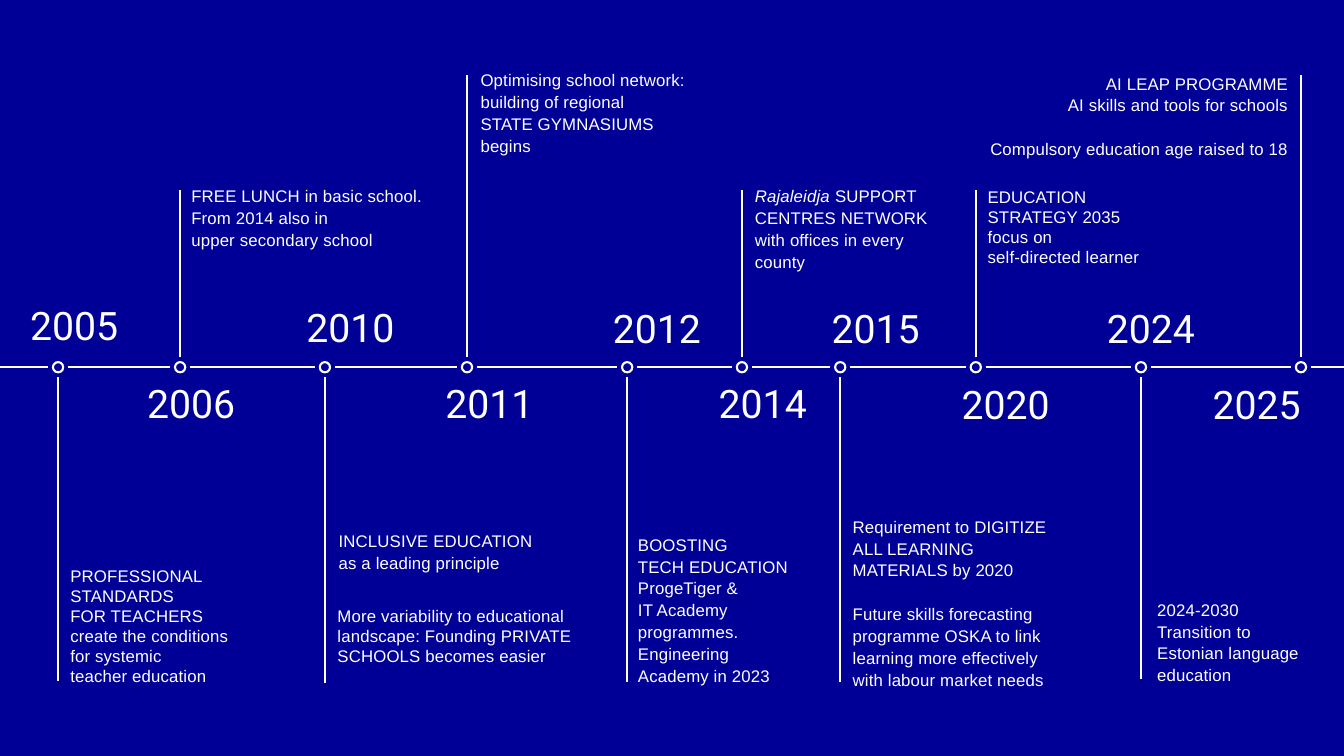
from itertools import pairwise

from lxml.etree import SubElement
from pptx import Presentation
from pptx.dml.color import RGBColor
from pptx.enum.shapes import MSO_CONNECTOR, MSO_SHAPE
from pptx.enum.text import MSO_ANCHOR, MSO_AUTO_SIZE, PP_ALIGN
from pptx.oxml.ns import qn
from pptx.util import Pt

COLORS = {"background": "000096", "white": "FFFFFF"}
WHITE = RGBColor.from_string(COLORS["white"])
SLIDE_WIDTH, SLIDE_HEIGHT = 960, 540
AXIS_Y = 262.3
DOT_SIZE = 7.3
DOT_GAP = 7
LINE_SPACING = 15.6

deck = Presentation()
deck.slide_width, deck.slide_height = Pt(SLIDE_WIDTH), Pt(SLIDE_HEIGHT)
page = deck.slides.add_slide(deck.slide_layouts[6])
page.background.fill.solid()
page.background.fill.fore_color.rgb = RGBColor.from_string(COLORS["background"])


def add_line(x1, y1, x2, y2):
    line = page.shapes.add_connector(MSO_CONNECTOR.STRAIGHT, Pt(x1), Pt(y1), Pt(x2), Pt(y2))
    line.line.color.rgb = WHITE
    line.line.width = Pt(1.5)
    SubElement(line._element.spPr, qn("a:effectLst"))


def add_text(frame, groups, font, size, spacing, align=PP_ALIGN.LEFT, tracking=0):
    """Groups are set one line apart; asterisks enclose italics."""
    paras = [(text, group > 0 and index == 0)
             for group, texts in enumerate(groups) for index, text in enumerate(texts)]
    for number, (text, opens_group) in enumerate(paras):
        para = frame.paragraphs[0] if number == 0 else frame.add_paragraph()
        para.alignment = align
        if spacing:
            para.line_spacing = Pt(spacing)
        if opens_group:
            para.space_before = Pt(LINE_SPACING)
        for row, words in enumerate(text.split("\n")):
            if row:
                para.add_line_break()
            for part, piece in enumerate(words.split("*")):
                if not piece:
                    continue
                span = para.add_run()
                span.text = piece
                span.font.name = font
                span.font.size = Pt(size)
                span.font.color.rgb = WHITE
                span.font.italic = part % 2 == 1
                if tracking:
                    span.font._element.set("spc", str(tracking))


# Milestones: year, x on the axis, far end of the stem, left and top of the year
milestones = [
    ("2005", 41.5, 486.7, 21.6, 221),
    ("2006", 128.7, 136, 105.1, 277.2),
    ("2010", 232.1, 488, 218.9, 222.5),
    ("2011", 333.6, 53.3, 318.2, 277),
    ("2012", 448, 487, 437.8, 223.2),
    ("2014", 530, 136, 513.4, 277.2),
    ("2015", 600.2, 487, 594, 223.2),
    ("2020", 697, 136, 686.9, 277.7),
    ("2024", 815, 485.3, 790.6, 223.2),
    ("2025", 929.3, 53.3, 866.2, 277.7),
]

# Axis, broken around each dot
stops = [-DOT_GAP, *(milestone[1] for milestone in milestones), SLIDE_WIDTH + DOT_GAP]
for left, right in pairwise(stops):
    add_line(left + DOT_GAP, AXIS_Y, right - DOT_GAP, AXIS_Y)

# Stems, dots and years
for year, x, stem_end, year_left, year_top in milestones:
    side = 1 if stem_end > AXIS_Y else -1
    add_line(x, AXIS_Y + side * DOT_GAP, x, stem_end)

    dot = page.shapes.add_shape(MSO_SHAPE.OVAL, Pt(x - DOT_SIZE / 2), Pt(AXIS_Y - DOT_SIZE / 2),
                                Pt(DOT_SIZE), Pt(DOT_SIZE))
    dot.shadow.inherit = False
    dot.fill.background()
    dot.line.color.rgb = WHITE
    dot.line.width = Pt(1.5)

    box = page.shapes.add_textbox(Pt(year_left), Pt(year_top), Pt(89.3), Pt(28))
    frame = box.text_frame
    frame.word_wrap = True
    frame.auto_size = MSO_AUTO_SIZE.SHAPE_TO_FIT_TEXT
    frame.margin_left = frame.margin_right = frame.margin_top = frame.margin_bottom = 0
    add_text(frame, [[year]], "Roboto", 28, 27.7)

# Notes: left, top, width, height, has margins, line spacing, anchor, alignment, text groups
TOP, BOTTOM = MSO_ANCHOR.TOP, MSO_ANCHOR.BOTTOM
LEFT, RIGHT = PP_ALIGN.LEFT, PP_ALIGN.RIGHT
notes = [
    (43.2, 400.3, 148.3, 94.3, True, None, TOP, LEFT,
     [["PROFESSIONAL STANDARDS", "FOR TEACHERS", "create the conditions",
       "for systemic", "teacher education"]]),
    (129.6, 128.2, 196.6, 54.7, True, LINE_SPACING, TOP, LEFT,
     [["FREE LUNCH in basic school.\nFrom 2014 also in\nupper secondary school"]]),
    (241.9, 378, 150.5, 31, False, LINE_SPACING, TOP, LEFT,
     [["INCLUSIVE EDUCATION", "as a leading principle"]]),
    (234, 429.1, 185, 65.5, True, None, TOP, LEFT,
     [["More variability to educational landscape: Founding PRIVATE SCHOOLS becomes easier"]]),
    (336.2, 45.4, 175.7, 70.6, True, LINE_SPACING, TOP, LEFT,
     [["Optimising school network: building of regional", "STATE GYMNASIUMS begins"]]),
    (448.6, 374.4, 128.9, 118.8, True, LINE_SPACING, BOTTOM, LEFT,
     [["BOOSTING", "TECH EDUCATION ProgeTiger &", "IT Academy programmes.",
       "Engineering Academy in 2023"]]),
    (532.1, 128.2, 141.8, 70.6, True, LINE_SPACING, TOP, LEFT,
     [["*Rajaleidja *SUPPORT CENTRES NETWORK with offices in every county"]]),
    (609.1, 331.9, 139.7, 160.6, False, LINE_SPACING, BOTTOM, LEFT,
     [["Requirement to DIGITIZE ALL LEARNING MATERIALS by 2020"],
      ["Future skills forecasting programme OSKA to link learning more effectively "
       "with labour market needs"]]),
    (698.4, 129.6, 184.3, 65.5, True, None, TOP, LEFT,
     [["EDUCATION\nSTRATEGY 2035", "focus on\nself-directed learner"]]),
    (826.6, 427, 113, 63.4, False, LINE_SPACING, TOP, LEFT,
     [["2024-2030", "Transition to Estonian language education"]]),
    (565.2, 51.1, 355, 63.4, False, LINE_SPACING, TOP, RIGHT,
     [["AI LEAP PROGRAMME", "AI skills and tools for schools"],
      ["Compulsory education age raised to 18"]]),
]
for left, top, width, height, has_margins, spacing, anchor, align, groups in notes:
    box = page.shapes.add_textbox(Pt(left), Pt(top), Pt(width), Pt(height))
    frame = box.text_frame
    frame.word_wrap = True
    frame.auto_size = MSO_AUTO_SIZE.SHAPE_TO_FIT_TEXT
    frame.vertical_anchor = anchor
    if not has_margins:
        frame.margin_left = frame.margin_right = frame.margin_top = frame.margin_bottom = 0
    add_text(frame, groups, "Arial", 12, spacing, align, tracking=10)

deck.save("out.pptx")
